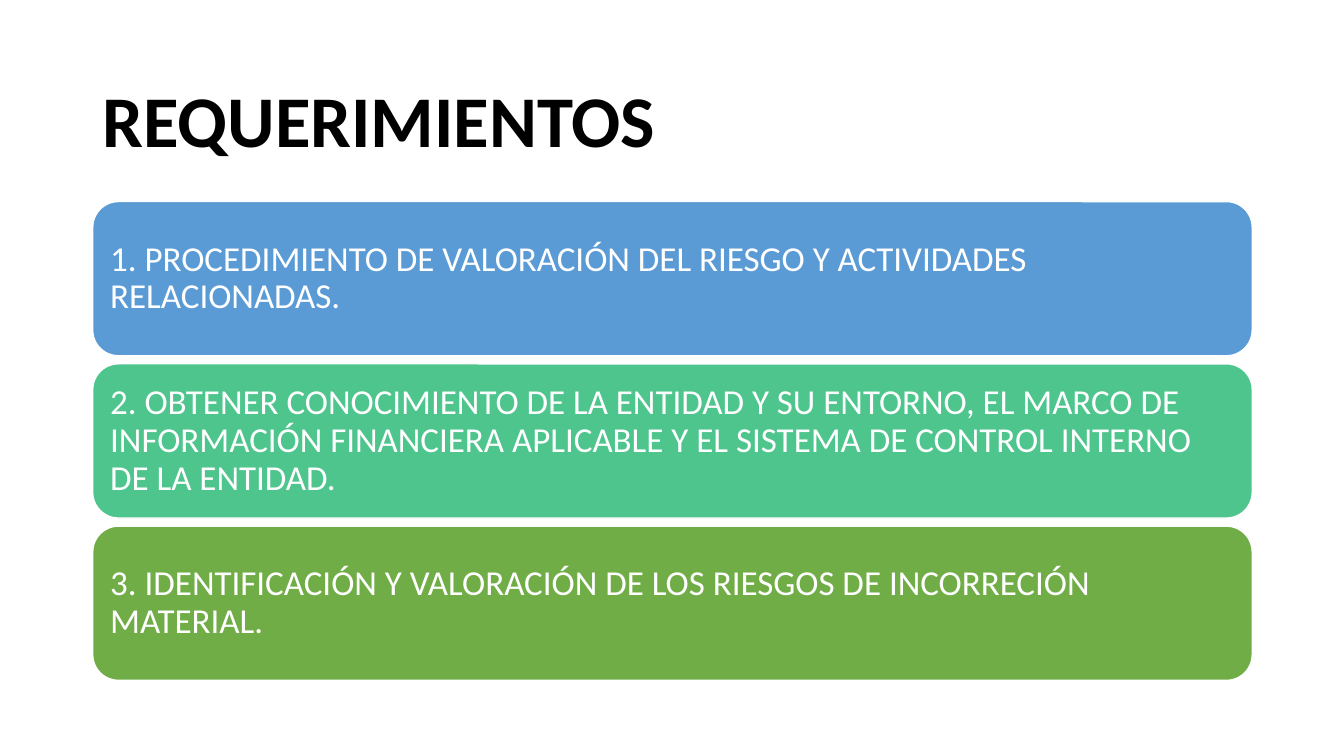
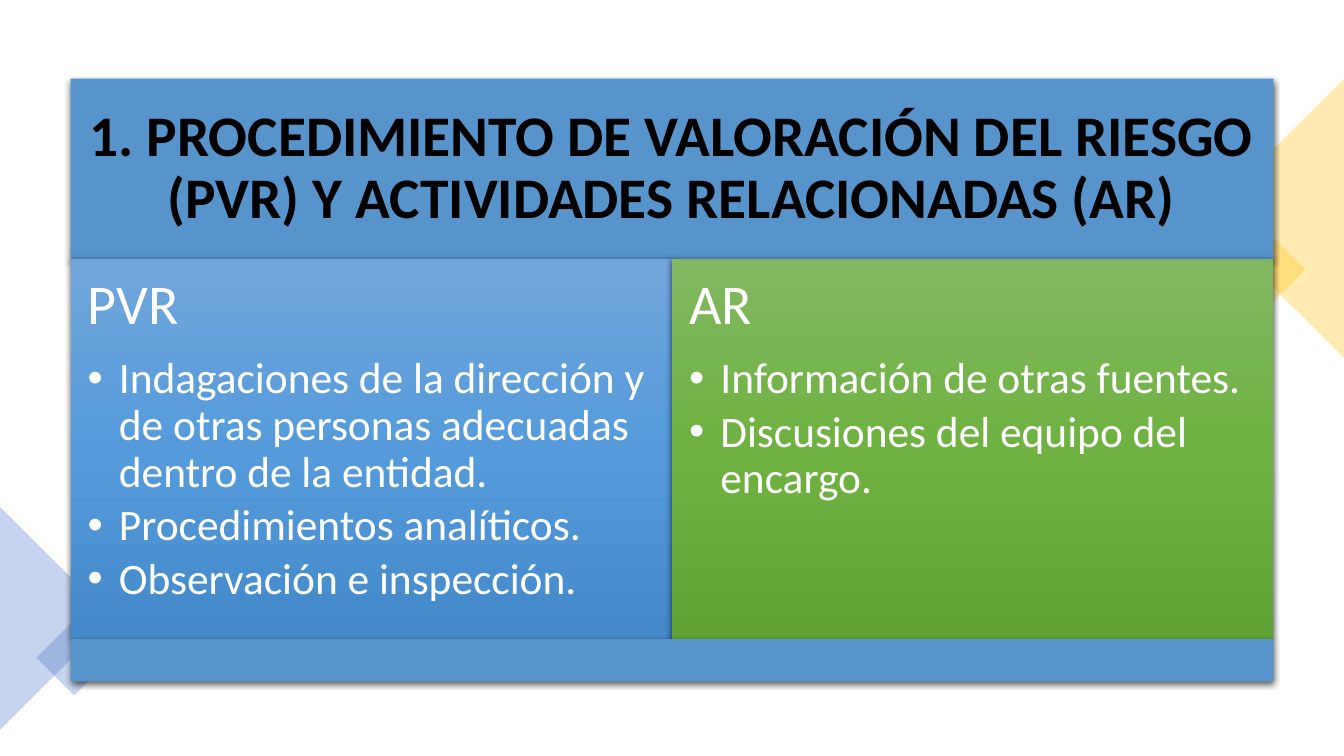
from lxml import etree
from pptx import Presentation
from pptx.dml.color import RGBColor
from pptx.enum.shapes import MSO_SHAPE as SHAPE
from pptx.enum.text import MSO_ANCHOR as ANCHOR, PP_ALIGN as ALIGN
from pptx.oxml.ns import qn
from pptx.util import Emu, Pt

SCALE = 9144
FONT = "Calibri"
BLACK, WHITE = "000000", "FFFFFF"
BLUE, TEAL, GREEN = "5B9BD5", "4DC58D", "70AD47"
HEADER_BLUE, GOLD, INDIGO = "5794CB", "FFC000", "4472C4"
BLUE_GRADIENT = ("71A6DB", "559BDB", "448ACA")
GREEN_GRADIENT = ("81B861", "6FB242", "62A336")


def px(n):
    return Emu(round(n * SCALE))


def rgb(hex_color):
    return RGBColor.from_string(hex_color)


def sub(parent, tag, **attrs):
    el = etree.SubElement(parent, qn(tag))
    for name, value in attrs.items():
        el.set(name, str(value))
    return el


def set_gradient(sp, colors):
    sp.fill.gradient()
    sp.fill.gradient_angle = 270
    stops = sp._element.spPr.find(".//" + qn("a:gsLst"))
    for stop in list(stops):
        stops.remove(stop)
    for i, color in enumerate(colors):
        stop = sub(stops, "a:gs", pos=100000 * i // (len(colors) - 1))
        sub(stop, "a:srgbClr", val=color)


def add_shadow(sp):
    effects = sp._element.spPr.find(qn("a:effectLst"))
    shadow = sub(effects, "a:outerShdw", blurRad=Pt(4.5), dist=Pt(1.5),
                 dir=5400000, algn="ctr", rotWithShape=0)
    sub(sub(shadow, "a:srgbClr", val=BLACK), "a:alpha", val=63000)


def add_box(slide, kind, box, fill, line=None, alpha=None, rotation=0, shadow=False):
    sp = slide.shapes.add_shape(kind, *map(px, box))
    sp.rotation = rotation
    sp.shadow.inherit = False
    if isinstance(fill, tuple):
        set_gradient(sp, fill)
    else:
        sp.fill.solid()
        sp.fill.fore_color.rgb = rgb(fill)
    if alpha:
        color = sp._element.spPr.find(".//" + qn("a:srgbClr"))
        sub(color, "a:alpha", val=alpha * 1000)
    if line:
        sp.line.color.rgb = rgb(line)
        sp.line.width = Pt(1)
    else:
        sp.line.fill.background()
    if shadow:
        add_shadow(sp)
    return sp


def set_frame(sp, anchor, inset_x, inset_y):
    tf = sp.text_frame
    tf.word_wrap = True
    tf.vertical_anchor = anchor
    tf.margin_left = tf.margin_right = px(inset_x)
    tf.margin_top = tf.margin_bottom = px(inset_y)
    return tf


def add_text(tf, text, size, color=WHITE, bold=False, align=ALIGN.LEFT, after=0.35, bullet=False):
    p = tf.paragraphs[0] if not tf.text else tf.add_paragraph()
    p.alignment = align
    p.line_spacing = 0.9
    p.space_after = Pt(round(size * after, 1))
    if bullet:
        pPr = p._p.get_or_add_pPr()
        pPr.set("marL", str(px(31)))
        pPr.set("indent", str(-px(31)))
        sub(pPr, "a:buFont", typeface="Arial")
        sub(pPr, "a:buChar", char="•")
    r = p.add_run()
    r.text = text
    r.font.name = FONT
    r.font.size = Pt(size)
    r.font.bold = bold
    r.font.color.rgb = rgb(color)


def add_title(slide, box, text):
    sp = slide.shapes.add_textbox(*map(px, box))
    tf = set_frame(sp, ANCHOR.MIDDLE, 10, 5)
    add_text(tf, text, 52, color=BLACK, bold=True, after=0)


def add_bands(slide, box, bands, gap=8):
    x, y, w, h = box
    band_h = (h - gap * (len(bands) - 1)) // len(bands)
    for i, (text, color) in enumerate(bands):
        band = (x, y + i * (band_h + gap), w, band_h)
        sp = add_box(slide, SHAPE.ROUNDED_RECTANGLE, band, color, line=WHITE)
        add_text(set_frame(sp, ANCHOR.MIDDLE, 10, 10), text, 25)


def add_decoration(slide):
    for kind, box, color, rotation in (
        (SHAPE.RECTANGLE, (1209, 232, 71, 71), GOLD, 45),
        (SHAPE.ISOSCELES_TRIANGLE, (1125, 147, 277, 139), GOLD, 270),
        (SHAPE.ISOSCELES_TRIANGLE, (-55, 558, 221, 111), INDIGO, 90),
        (SHAPE.RECTANGLE, (47, 626, 53, 53), INDIGO, 45),
    ):
        add_box(slide, kind, box, color, alpha=30, rotation=rotation)


def add_column(slide, box, heading, items, gradient):
    sp = add_box(slide, SHAPE.RECTANGLE, box, gradient, shadow=True)
    tf = set_frame(sp, ANCHOR.TOP, 17, 17)
    add_text(tf, heading, 40)
    for item in items:
        add_text(tf, item, 31, after=0.15, bullet=True)


def add_panel(slide, box, title, columns, header_h=179, footer_h=42):
    x, y, w, h = box
    header = add_box(slide, SHAPE.RECTANGLE, (x, y, w, header_h), HEADER_BLUE, shadow=True)
    tf = set_frame(header, ANCHOR.MIDDLE, 17, 17)
    add_text(tf, title, 41, color=BLACK, bold=True, align=ALIGN.CENTER)
    col_w = w / len(columns)
    col_h = h - header_h - footer_h
    for i, column in enumerate(columns):
        add_column(slide, (x + i * col_w, y + header_h, col_w, col_h), *column)
    footer = (x, y + h - footer_h, w, footer_h)
    add_box(slide, SHAPE.RECTANGLE, footer, HEADER_BLUE, shadow=True)


def build_requirements(slide):
    add_title(slide, (92, 61, 1150, 124), "REQUERIMIENTOS")
    add_bands(slide, (92, 200, 1150, 475), (
        ("1. PROCEDIMIENTO DE VALORACIÓN DEL RIESGO Y ACTIVIDADES RELACIONADAS.", BLUE),
        ("2. OBTENER CONOCIMIENTO DE LA ENTIDAD Y SU ENTORNO, EL MARCO DE INFORMACIÓN "
         "FINANCIERA APLICABLE Y EL SISTEMA DE CONTROL INTERNO DE LA ENTIDAD.", TEAL),
        ("3. IDENTIFICACIÓN Y VALORACIÓN DE LOS RIESGOS DE INCORRECIÓN MATERIAL.", GREEN),
    ))


def build_procedures(slide):
    add_decoration(slide)
    add_panel(
        slide, (70, 78, 1193, 598),
        "1. PROCEDIMIENTO DE VALORACIÓN DEL RIESGO (PVR) Y ACTIVIDADES RELACIONADAS (AR)",
        (
            ("PVR", (
                "Indagaciones de la dirección y de otras personas adecuadas dentro de la entidad.",
                "Procedimientos analíticos.",
                "Observación e inspección.",
            ), BLUE_GRADIENT),
            ("AR", (
                "Información de otras fuentes.",
                "Discusiones del equipo del encargo.",
            ), GREEN_GRADIENT),
        ),
    )


def main():
    prs = Presentation()
    prs.slide_width, prs.slide_height = px(1333), px(750)
    for build in (build_requirements, build_procedures):
        build(prs.slides.add_slide(prs.slide_layouts[6]))
    prs.save("out.pptx")


if __name__ == "__main__":
    main()
